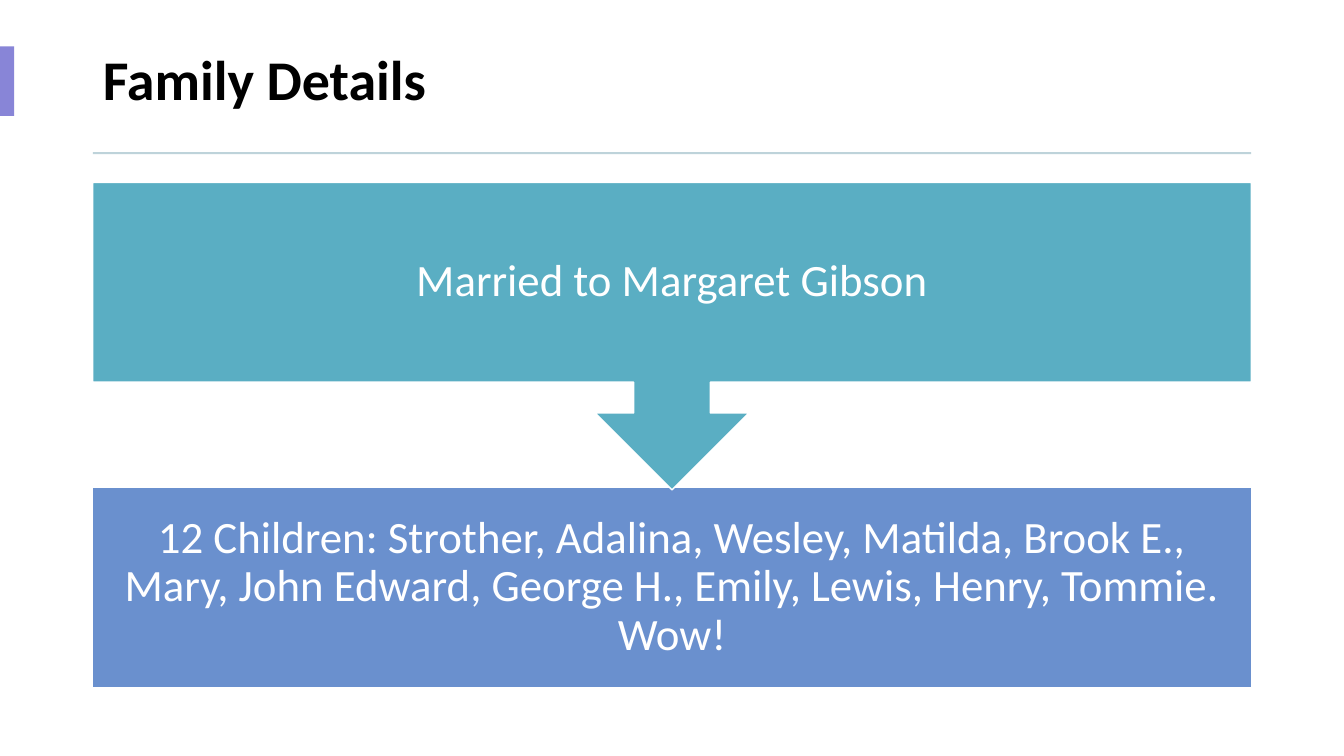
from pptx import Presentation, util as u
from pptx.dml.color import RGBColor
from pptx.enum import shapes, text

WIDE, HIGH = 13.33, 7.5
LEFT, SPAN = 0.92, 11.49
KIND = shapes.MSO_SHAPE


def paint(target, color):
    target.solid()
    target.fore_color.rgb = RGBColor.from_string(color)


def place(shape, box):
    for name, size in zip(("left", "top", "width", "height"), box):
        setattr(shape, name, u.Inches(size))


def write(shape, words, align, look, color, inset):
    frame = shape.text_frame
    frame.text = words
    style = {"word_wrap": True, "vertical_anchor": text.MSO_ANCHOR.MIDDLE,
             "auto_size": text.MSO_AUTO_SIZE.NONE}
    for side in ("left", "top", "right", "bottom"):
        style["margin_" + side] = u.Inches(inset)
    for name, value in style.items():
        setattr(frame, name, value)
    para = frame.paragraphs[0]
    para.alignment, para.line_spacing = align, 0.9
    font = para.runs[0].font
    for name, value in look.items():
        setattr(font, name, value)
    font.color.rgb = RGBColor.from_string(color)


def block(slide, kind, box, color, edge=None):
    shape = slide.shapes.add_shape(kind, *map(u.Inches, box))
    shape.shadow.inherit = False
    paint(shape.fill, color)
    if edge:
        paint(shape.line.fill, edge)
        shape.line.width = u.Pt(1)
    else:
        shape.line.fill.background()
    return shape


def header(slide, box, words):
    """Title with an accent tab at the slide edge and a rule below."""
    left, top, width, height = box
    title = slide.shapes.title
    place(title, box)
    look = {"name": "Calibri", "size": u.Pt(40), "bold": True}
    write(title, words, text.PP_ALIGN.LEFT, look, "000000", 0.1)
    block(slide, KIND.RECTANGLE, (0, top + 0.19, 0.14, 0.69), "8885D7")
    block(slide, KIND.RECTANGLE, (left, top + height + 0.14, width, 0.02), "BED3DA")


def flow(slide, box, first, last):
    """Two stacked steps, the upper one pointing down to the lower."""
    left, top, width, height = box
    low, call = 1.99, 3.05
    steps = (
        (KIND.RECTANGLE, top + height - low, low, "6A90CE", last),
        (KIND.DOWN_ARROW_CALLOUT, top, call, "5AAEC3", first),
    )
    look = {"name": "Calibri", "size": u.Pt(32), "bold": False}
    for kind, y, tall, color, words in steps:
        step = block(slide, kind, (left, y, width, tall), color, "FFFFFF")
        write(step, words, text.PP_ALIGN.CENTER, look, "FFFFFF", 0.25)


def main():
    deck = Presentation()
    deck.slide_width, deck.slide_height = u.Inches(WIDE), u.Inches(HIGH)
    slide = deck.slides.add_slide(deck.slide_layouts[5])
    paint(slide.background.fill, "FFFFFF")
    header(slide, (LEFT, 0.27, SPAN, 1.1), "Family Details")
    flow(slide, (LEFT, 1.81, SPAN, 5.01), "Married to Margaret Gibson",
         "12 Children: Strother, Adalina, Wesley, Matilda, Brook E., Mary, "
         "John Edward, George H., Emily, Lewis, Henry, Tommie. Wow!")
    deck.save("out.pptx")


if __name__ == "__main__":
    main()
